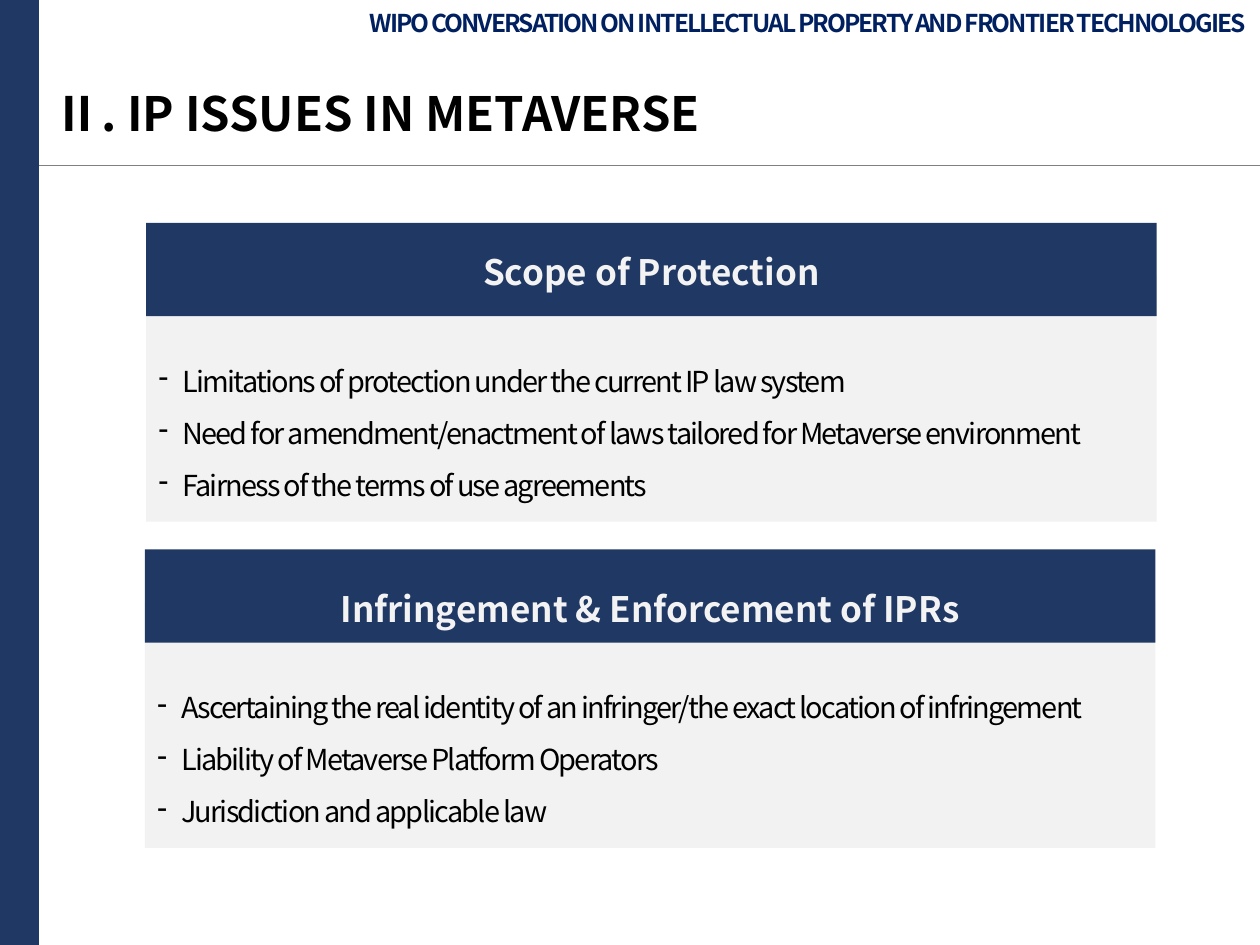
import pptx
import pptx.dml.color
import pptx.enum.shapes
import pptx.enum.text
import pptx.oxml.ns
import pptx.util
from lxml import etree
from pptx.dml.color import RGBColor
from pptx.util import Inches

NAVY = RGBColor(0x20, 0x38, 0x64)
HEADER_BLUE = RGBColor(0x00, 0x20, 0x60)
PANEL_GRAY = RGBColor(0xF2, 0xF2, 0xF2)
HEADING_WHITE = RGBColor(0xF3, 0xF3, 0xF3)
RULE_GRAY = RGBColor(0x80, 0x80, 0x80)
BLACK = RGBColor(0, 0, 0)
FONT = "Noto Sans CJK KR"
ALIGN = pptx.enum.text.PP_ALIGN
qn = pptx.oxml.ns.qn

deck = pptx.Presentation()
deck.slide_width, deck.slide_height = Inches(10), Inches(7.5)
page = deck.slides.add_slide(deck.slide_layouts[6])


def add_bar(left, top, width, height, color):
    bar = page.shapes.add_shape(
        pptx.enum.shapes.MSO_SHAPE.RECTANGLE,
        Inches(left), Inches(top), Inches(width), Inches(height))
    bar.shadow.inherit = False
    bar.fill.solid()
    bar.fill.fore_color.rgb = color
    bar.line.fill.background()


def add_text(left, top, width, height, lines, size, color, bold=False,
             align=ALIGN.LEFT, line_spacing=None, tracking=0, bullet=None, wrap=True):
    box = page.shapes.add_textbox(Inches(left), Inches(top), Inches(width), Inches(height))
    frame = box.text_frame
    frame.word_wrap = wrap
    for index, line in enumerate(lines):
        para = frame.paragraphs[0] if index == 0 else frame.add_paragraph()
        para.alignment = align
        if line_spacing:
            para.line_spacing = line_spacing
        if bullet:
            properties = para._p.get_or_add_pPr()
            properties.set("marL", str(Inches(0.19)))
            properties.set("indent", str(-Inches(0.19)))
            etree.SubElement(properties, qn("a:buFontTx"))
            etree.SubElement(properties, qn("a:buChar")).set("char", bullet)
        span = para.add_run()
        span.text = line
        span.font.size = pptx.util.Pt(size)
        span.font.bold = bold
        span.font.name = FONT
        span.font.color.rgb = color
        run_properties = span._r.get_or_add_rPr()
        etree.SubElement(run_properties, qn("a:ea")).set("typeface", FONT)
        if tracking:
            run_properties.set("spc", str(round(tracking * 100)))
    return frame


# Rule under the title and side band
rule = page.shapes.add_connector(
    pptx.enum.shapes.MSO_CONNECTOR.STRAIGHT,
    Inches(0.23), Inches(1.31), Inches(10), Inches(1.31))
rule.line.color.rgb = RULE_GRAY
rule.line.width = pptx.util.Pt(0.5)
etree.SubElement(rule._element.spPr, qn("a:effectLst"))
add_bar(0, 0, 0.31, 7.5, NAVY)

# Running header and title
header = add_text(0, 0, 10, 0.35,
                  ["WIPO CONVERSATION ON INTELLECTUAL PROPERTY AND FRONTIER TECHNOLOGIES"],
                  14, HEADER_BLUE, bold=True, align=ALIGN.RIGHT, tracking=-1.1)
header.margin_left = header.margin_right = Inches(0.11)
header.margin_top = header.margin_bottom = Inches(0.06)
add_text(0.33, 0.62, 5.35, 0.56, ["Ⅱ. IP ISSUES IN METAVERSE"], 27, BLACK,
         bold=True, wrap=False)

# Topic panels: left, top, heading offset, list width, heading, points
panels = [
    (1.16, 1.77, 0.10, 8.02, "Scope of Protection", [
        "Limitations of protection under the current IP law system",
        "Need for amendment/enactment of laws tailored for Metaverse environment",
        "Fairness of the terms of use agreements"]),
    (1.15, 4.36, 0.19, 8.13, "Infringement & Enforcement of IPRs", [
        "Ascertaining the real identity of an infringer/the exact location of infringement",
        "Liability of Metaverse Platform Operators",
        "Jurisdiction and applicable law"]),
]
for left, top, heading_offset, list_width, heading, points in panels:
    add_bar(left, top + 0.42, 8.02, 1.95, PANEL_GRAY)
    add_bar(left, top, 8.02, 0.74, NAVY)
    add_text(left, top + heading_offset, 8.02, 0.47, [heading], 20, HEADING_WHITE,
             bold=True, align=ALIGN.CENTER, line_spacing=1.2)
    add_text(left, top + 0.93, list_width, 1.3, points, 16.5, BLACK,
             line_spacing=1.5, tracking=-1, bullet="-")

deck.save("out.pptx")
